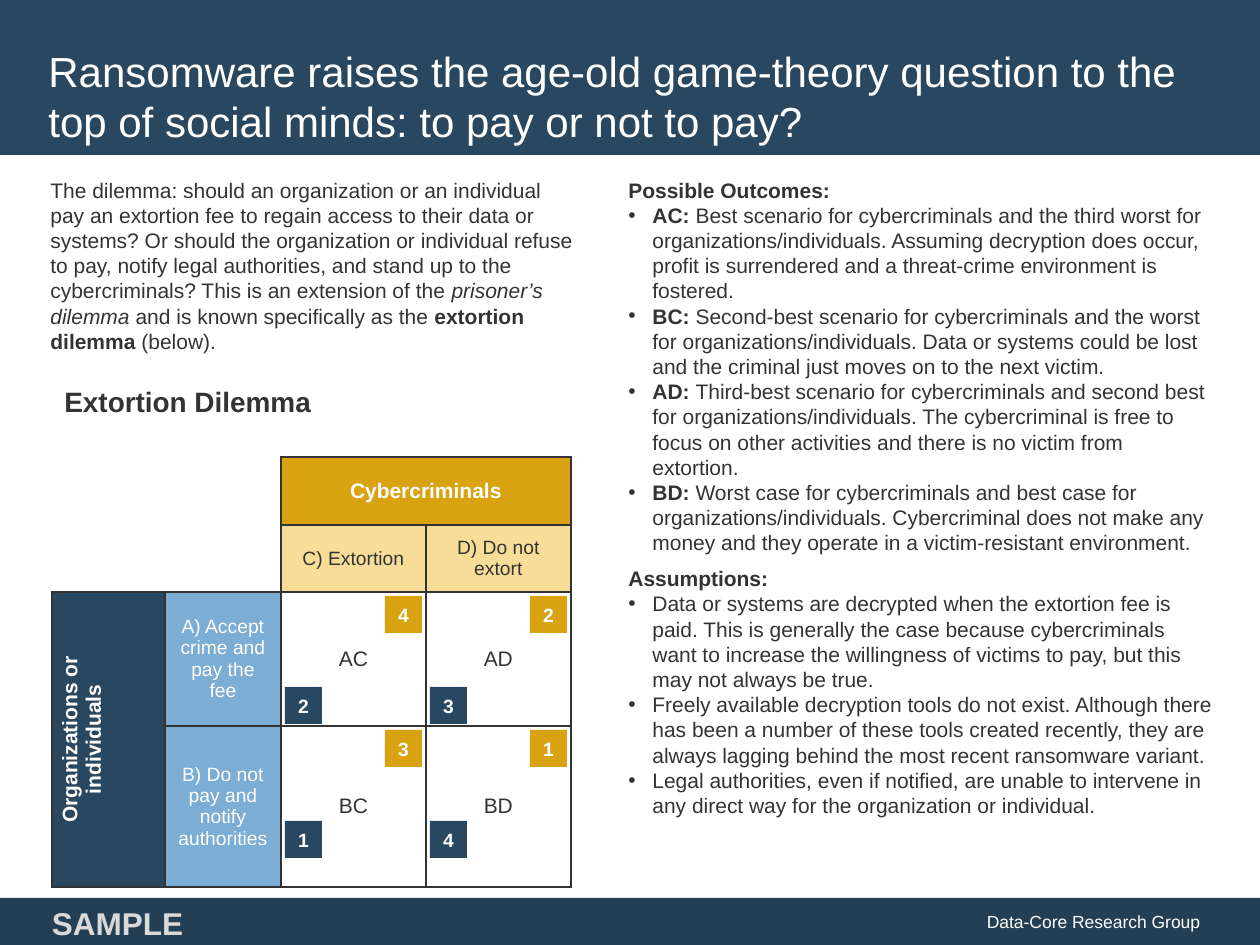
import dataclasses

import lxml.etree
import pptx
import pptx.dml.color
import pptx.enum.shapes
import pptx.enum.text
import pptx.oxml.ns
import pptx.util

PIXEL = 914400 // 126
ALIGN = pptx.enum.text.PP_ALIGN
MIDDLE = pptx.enum.text.MSO_ANCHOR.MIDDLE


@dataclasses.dataclass(frozen=True)
class Theme:
    font: str = "Arial"
    navy: str = "29475F"
    footer: str = "243F54"
    gold: str = "D9A210"
    cream: str = "F7DD98"
    blue: str = "7CADD4"
    ink: str = "333333"
    white: str = "FFFFFF"
    pale: str = "D9D9D9"
    title: int = 24
    heading: int = 16
    sample: int = 18
    body: int = 12
    label: int = 11
    small: int = 10


THEME = Theme()

DILEMMA = [
    ("The dilemma: should an organization or an individual pay an extortion fee to regain access to their "
     "data or systems? Or should the organization or individual refuse to pay, notify legal authorities, "
     "and stand up to the cybercriminals? This is an extension of the ", ""),
    ("prisoner’s dilemma", "italic"),
    (" and is known specifically as the ", ""),
    ("extortion dilemma ", "bold"),
    ("(below).", ""),
]
OUTCOMES = [
    ("AC: ", "Best scenario for cybercriminals and the third worst for organizations/individuals. Assuming "
     "decryption does occur, profit is surrendered and a threat-crime environment is fostered."),
    ("BC: ", "Second-best scenario for cybercriminals and the worst for organizations/individuals. Data or "
     "systems could be lost and the criminal just moves on to the next victim."),
    ("AD: ", "Third-best scenario for cybercriminals and second best for organizations/individuals. The "
     "cybercriminal is free to focus on other activities and there is no victim from extortion."),
    ("BD: ", "Worst case for cybercriminals and best case for organizations/individuals. Cybercriminal does "
     "not make any money and they operate in a victim-resistant environment."),
]
ASSUMPTIONS = [
    "Data or systems are decrypted when the extortion fee is paid. This is generally the case because "
    "cybercriminals want to increase the willingness of victims to pay, but this may not always be true.",
    "Freely available decryption tools do not exist. Although there has been a number of these tools "
    "created recently, they are always lagging behind the most recent ransomware variant.",
    "Legal authorities, even if notified, are unable to intervene in any direct way for the organization "
    "or individual.",
]
CELLS = {
    (0, 2): ("Cybercriminals", THEME.gold, THEME.white, THEME.body, True),
    (1, 2): ("C) Extortion", THEME.cream, THEME.ink, THEME.label, False),
    (1, 3): ("D) Do not extort", THEME.cream, THEME.ink, THEME.label, False),
    (2, 0): ("Organizations or individuals", THEME.navy, THEME.white, THEME.body, True),
    (2, 1): ("A) Accept crime and pay the fee", THEME.blue, THEME.white, THEME.label, False),
    (2, 2): ("AC", None, THEME.ink, THEME.body, False),
    (2, 3): ("AD", None, THEME.ink, THEME.body, False),
    (3, 1): ("B) Do not pay and notify authorities", THEME.blue, THEME.white, THEME.label, False),
    (3, 2): ("BC", None, THEME.ink, THEME.body, False),
    (3, 3): ("BD", None, THEME.ink, THEME.body, False),
}


def px(*lengths):
    return [length * PIXEL for length in lengths]


def rgb(color):
    return pptx.dml.color.RGBColor.from_string(color)


def style(span, size, color, bold=False, italic=False):
    span.font.name = THEME.font
    span.font.size = pptx.util.Pt(size)
    span.font.color.rgb = rgb(color)
    span.font.bold = bold
    span.font.italic = italic


def write(frame, text, size, color, bold=False, align=ALIGN.LEFT):
    frame.text = text
    para = frame.paragraphs[0]
    para.alignment = align
    style(para.runs[0], size, color, bold)


def add_runs(para, pieces):
    for text, emphasis in pieces:
        span = para.add_run()
        span.text = text
        style(span, THEME.body, THEME.ink, emphasis == "bold", emphasis == "italic")


def add_bullet(para):
    properties = para._p.get_or_add_pPr()
    properties.set("marL", str(24 * PIXEL))
    properties.set("indent", str(-24 * PIXEL))
    for tag, name, value in (("a:buFont", "typeface", THEME.font), ("a:buChar", "char", "•")):
        lxml.etree.SubElement(properties, pptx.oxml.ns.qn(tag)).set(name, value)


def add_text(page, box):
    frame = page.shapes.add_textbox(*px(*box)).text_frame
    frame.word_wrap = True
    return frame


def add_block(page, box, color):
    block = page.shapes.add_shape(pptx.enum.shapes.MSO_SHAPE.RECTANGLE, *px(*box))
    block.shadow.inherit = False
    block.fill.solid()
    block.fill.fore_color.rgb = rgb(color)
    block.line.fill.background()
    block.text_frame.vertical_anchor = MIDDLE
    return block


def draw_header(page, box):
    left, top, width, height = box
    add_block(page, box, THEME.navy)
    frame = add_text(page, (left + 36, top + 35, width - 72, height - 34))
    frame.vertical_anchor = MIDDLE
    write(frame, "Ransomware raises the age-old game-theory question to the top of social minds: "
          "to pay or not to pay?", THEME.title, THEME.white)


def draw_footer(page, box):
    left, top, width, height = box
    frame = add_block(page, box, THEME.footer).text_frame
    frame.margin_right = 60 * PIXEL
    write(frame, "Data-Core Research Group", THEME.small, THEME.white, align=ALIGN.RIGHT)
    sample = add_text(page, (left + 33, top + 10, 169, 30))
    sample.vertical_anchor = MIDDLE
    write(sample, "SAMPLE", THEME.sample, THEME.pale, True, ALIGN.CENTER)


def draw_dilemma(page, box):
    left, top, width, height = box
    add_runs(add_text(page, (left, top, width, 190)).paragraphs[0], DILEMMA)
    heading = add_text(page, (left + 14, top + 207, 289, 47))
    write(heading, "Extortion Dilemma", THEME.heading, THEME.ink, True)
    draw_matrix(page, (left + 14, top + 286, 519, 403))


def add_borders(cell):
    properties = cell._tc.get_or_add_tcPr()
    for side in ("a:lnL", "a:lnR", "a:lnT", "a:lnB"):
        line = lxml.etree.SubElement(properties, pptx.oxml.ns.qn(side), w="12700")
        fill = lxml.etree.SubElement(line, pptx.oxml.ns.qn("a:solidFill"))
        lxml.etree.SubElement(fill, pptx.oxml.ns.qn("a:srgbClr"), val=THEME.ink)


def draw_matrix(page, box):
    left, top, width, height = box
    table = page.shapes.add_table(4, 4, *px(*box)).table
    table.first_row = table.horz_banding = False
    for column, length in zip(table.columns, px(113, 116, 145, 145)):
        column.width = length
    for row, length in zip(table.rows, px(68, 67, 134, 134)):
        row.height = length
    table.cell(0, 2).merge(table.cell(0, 3))
    table.cell(2, 0).merge(table.cell(3, 0))
    for row in range(4):
        for column in range(4):
            cell = table.cell(row, column)
            if row > 1 or column > 1:
                add_borders(cell)
            cell.fill.background()
    for (row, column), (text, fill, color, size, bold) in CELLS.items():
        cell = table.cell(row, column)
        cell.vertical_anchor = MIDDLE
        write(cell.text_frame, text, size, color, bold, ALIGN.CENTER)
        if fill:
            cell.fill.solid()
            cell.fill.fore_color.rgb = rgb(fill)
    table.cell(2, 0)._tc.get_or_add_tcPr().set("vert", "vert270")
    draw_scores(page, (left + 233, top + 230), THEME.navy, ("23", "14"))
    draw_scores(page, (left + 333, top + 139), THEME.gold, ("42", "31"))


def draw_scores(page, corner, color, scores):
    left, top = corner
    for row, line in enumerate(scores):
        for column, score in enumerate(line):
            frame = add_block(page, (left + 145 * column, top + 134 * row, 37, 37), color).text_frame
            frame.word_wrap = False
            write(frame, score, THEME.label, THEME.white, True, ALIGN.CENTER)


def draw_outcomes(page, box):
    frame = add_text(page, box)
    add_runs(frame.paragraphs[0], [("Possible Outcomes:", "bold")])
    for name, text in OUTCOMES:
        para = frame.add_paragraph()
        add_bullet(para)
        add_runs(para, [(name, "bold"), (text, "")])
    para.space_after = pptx.util.Pt(6)
    add_runs(frame.add_paragraph(), [("Assumptions:", "bold")])
    for text in ASSUMPTIONS:
        para = frame.add_paragraph()
        add_bullet(para)
        add_runs(para, [(text, "")])


def main():
    deck = pptx.Presentation()
    deck.slide_width, deck.slide_height = px(1260, 945)
    page = deck.slides.add_slide(deck.slide_layouts[6])
    draw_header(page, (0, 0, 1260, 155))
    draw_dilemma(page, (38, 171, 548, 718))
    draw_outcomes(page, (616, 171, 610, 685))
    draw_footer(page, (0, 898, 1260, 47))
    deck.save("out.pptx")


if __name__ == "__main__":
    main()
